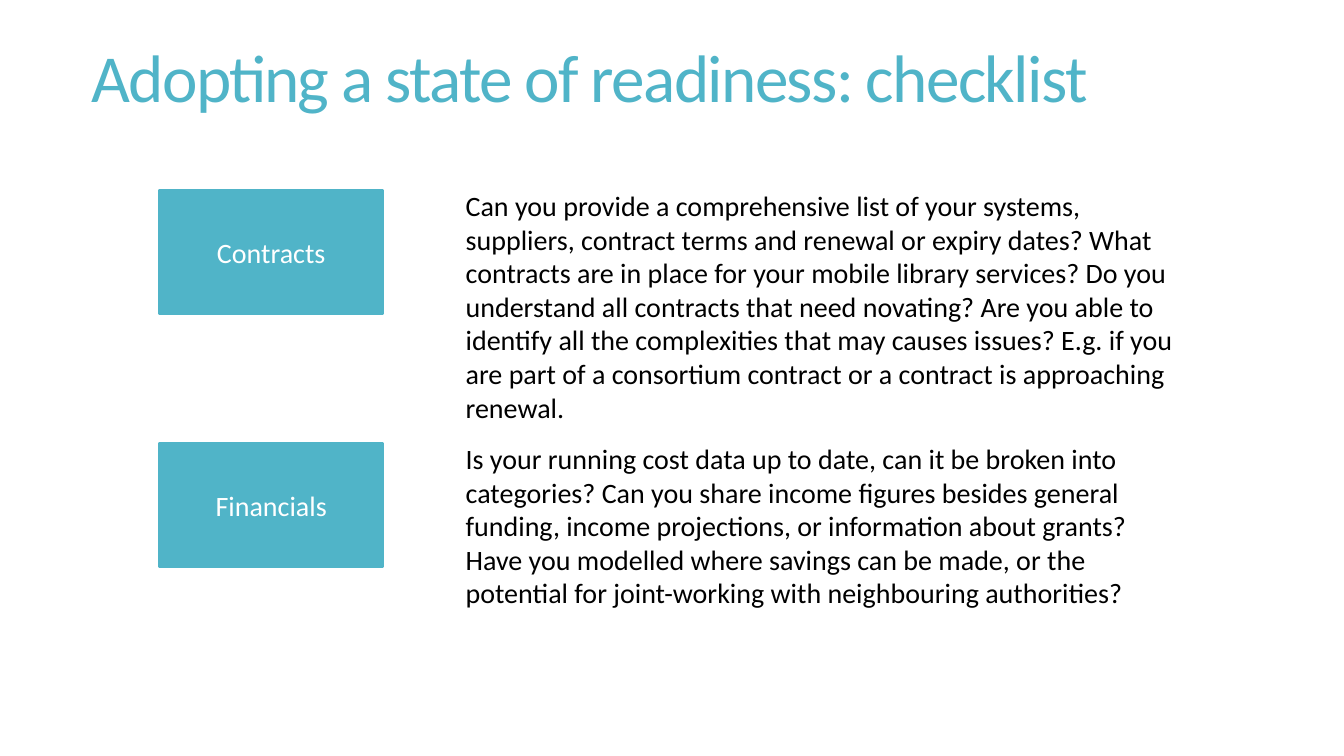
from dataclasses import dataclass

from pptx import Presentation
from pptx.dml.color import RGBColor
from pptx.enum.shapes import MSO_SHAPE
from pptx.enum.text import MSO_ANCHOR, MSO_AUTO_SIZE, PP_ALIGN
from pptx.util import Inches, Pt


@dataclass(frozen=True)
class Theme:
    font: str = "Calibri"
    accent: RGBColor = RGBColor(0x50, 0xB4, 0xC8)
    light: RGBColor = RGBColor(0xFF, 0xFF, 0xFF)
    dark: RGBColor = RGBColor(0x00, 0x00, 0x00)
    title_size: int = 48
    body_size: int = 20


THEME = Theme()

CHECKLIST = [
    (
        "Contracts",
        "Can you provide a comprehensive list of your systems, suppliers, "
        "contract terms and renewal or expiry dates? What contracts are in place "
        "for your mobile library services? Do you understand all contracts that "
        "need novating? Are you able to identify all the complexities that may "
        "causes issues? E.g. if you are part of a consortium contract or a "
        "contract is approaching renewal.",
        1.89,
        2.46,
    ),
    (
        "Financials",
        "Is your running cost data up to date, can it be broken into categories? "
        "Can you share income figures besides general funding, income "
        "projections, or information about grants? Have you modelled where "
        "savings can be made, or the potential for joint-working with "
        "neighbouring authorities?",
        4.4,
        1.78,
    ),
]


def write_text(frame, text, size, color, align, anchor):
    frame.text = text
    frame.word_wrap = True
    frame.vertical_anchor = anchor
    para = frame.paragraphs[0]
    para.alignment = align
    span = para.runs[0]
    span.font.name = THEME.font
    span.font.size = Pt(size)
    span.font.color.rgb = color
    return para


def format_title(slide, text):
    title = slide.shapes.title
    title.left, title.top = Inches(0.81), Inches(0.05)
    title.width, title.height = Inches(11.71), Inches(1.51)
    para = write_text(title.text_frame, text, THEME.title_size, THEME.accent,
                      PP_ALIGN.LEFT, MSO_ANCHOR.MIDDLE)
    title.text_frame.auto_size = MSO_AUTO_SIZE.NONE
    para.line_spacing = 0.9
    para.runs[0].font._element.set("spc", "-120")


def add_topic_box(slide, topic, top):
    box = slide.shapes.add_shape(MSO_SHAPE.RECTANGLE, Inches(1.58), Inches(top),
                                 Inches(2.22), Inches(1.22))
    box.shadow.inherit = False
    box.fill.solid()
    box.fill.fore_color.rgb = THEME.accent
    box.line.color.rgb = THEME.accent
    box.line.width = Pt(1.5)
    write_text(box.text_frame, topic, THEME.body_size, THEME.light,
               PP_ALIGN.CENTER, MSO_ANCHOR.MIDDLE)


def add_questions(slide, questions, top, height):
    box = slide.shapes.add_textbox(Inches(4.52), Inches(top),
                                   Inches(7.24), Inches(height))
    write_text(box.text_frame, questions, THEME.body_size, THEME.dark,
               PP_ALIGN.LEFT, MSO_ANCHOR.TOP)
    box.text_frame.auto_size = MSO_AUTO_SIZE.SHAPE_TO_FIT_TEXT


def main():
    deck = Presentation()
    deck.slide_width, deck.slide_height = Inches(13.33), Inches(7.5)
    slide = deck.slides.add_slide(deck.slide_layouts.get_by_name("Title Only"))
    format_title(slide, "Adopting a state of readiness: checklist")
    for topic, questions, top, height in CHECKLIST:
        add_topic_box(slide, topic, top)
        add_questions(slide, questions, top - 0.07, height)
    deck.save("out.pptx")


if __name__ == "__main__":
    main()
